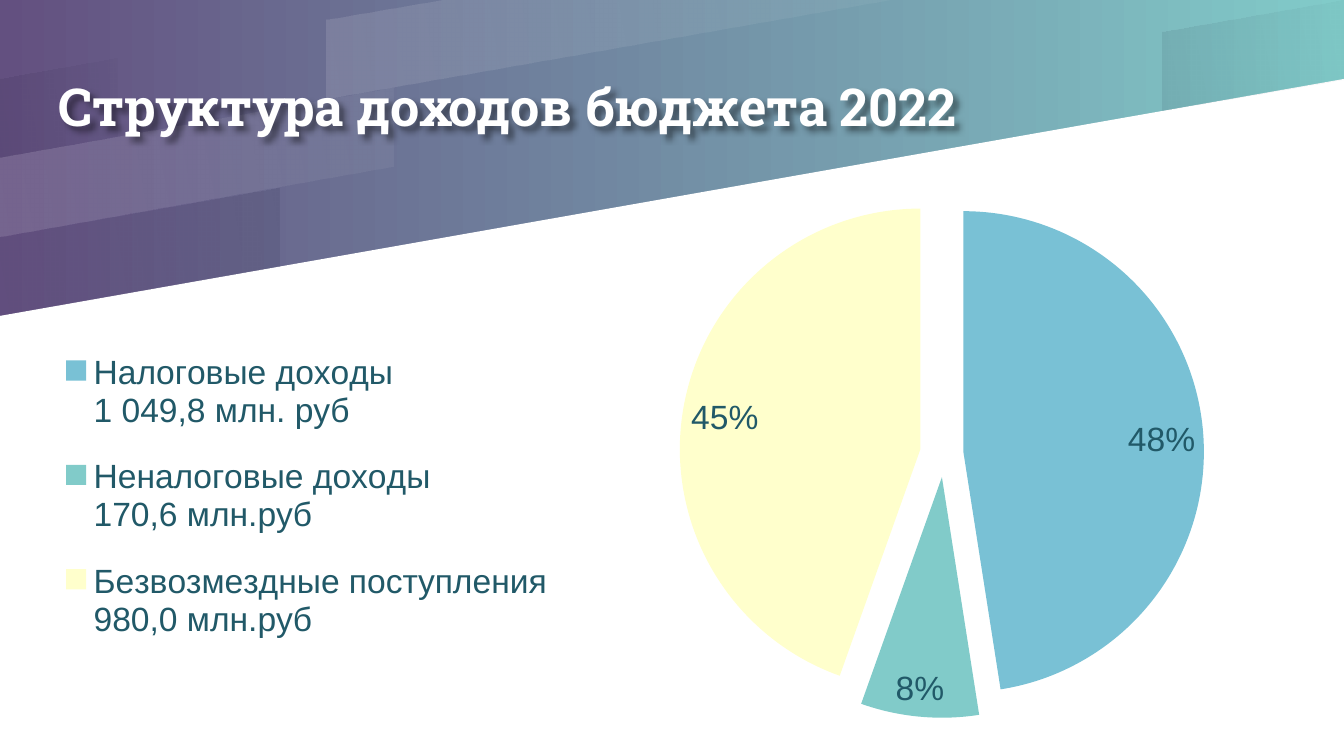
from dataclasses import dataclass

from lxml.etree import SubElement
from pptx import Presentation
from pptx.chart.chart import Chart
from pptx.chart.data import CategoryChartData
from pptx.chart.point import Point
from pptx.dml.color import RGBColor
from pptx.dml.fill import FillFormat
from pptx.enum.chart import XL_CHART_TYPE as ChartType
from pptx.enum.chart import XL_LABEL_POSITION as LabelPosition
from pptx.enum.chart import XL_LEGEND_POSITION as LegendPosition
from pptx.enum.text import MSO_ANCHOR as Anchor
from pptx.enum.text import PP_ALIGN as Align
from pptx.oxml import parse_xml
from pptx.oxml.ns import nsdecls, qn
from pptx.slide import Slide
from pptx.util import Emu, Pt

TITLE_ONLY = 5


@dataclass(frozen=True)
class Theme:
    violet: str = "635080"
    teal: str = "81CBC9"
    white: str = "FFFFFF"
    shade: str = "00001A"
    ink: str = "215968"
    title_font: str = "Roboto Slab"
    chart_font: str = "Arial"
    title_size: int = 28
    chart_size: int = 18


@dataclass(frozen=True)
class Box:
    left: int
    top: int
    width: int
    height: int


@dataclass(frozen=True)
class Band:
    outline: tuple[tuple[int, int], ...]
    color: str
    opacity: tuple[int, int]


@dataclass(frozen=True)
class Income:
    label: str
    share: int
    color: str
    explosion: int
    label_shift: tuple[int, int]


THEME = Theme()
SLIDE = Box(0, 0, 1344, 756)
TITLE = Box(59, 1, 1005, 178)
CHART = Box(27, 134, 1292, 597)
PIE = Box(580, 213, 729, 481)
LEGEND = Box(51, 325, 510, 342)

LOWER_PANEL = ((0, 756), (1344, 756), (1344, 79), (0, 316))
BANDS = (
    Band(((446, 0), (327, 20), (327, 99), (894, 0)), THEME.white, (12, 5)),
    Band(((0, 79), (0, 158), (117, 137), (117, 58)), THEME.shade, (8, 2)),
    Band(((0, 237), (0, 316), (279, 267), (279, 188)), THEME.shade, (2, 8)),
    Band(((1344, 0), (1163, 32), (1163, 110), (1344, 79)), THEME.shade, (8, 2)),
    Band(((0, 158), (0, 237), (394, 167), (394, 88)), THEME.white, (12, 5)),
)
INCOMES = (
    Income("Налоговые доходы\n1 049,8 млн. руб", 48, "79C1D5", 8, (0, 6)),
    Income("Неналоговые доходы\n170,6 млн.руб", 8, "81CBC9", 10, (-25, -1)),
    Income("Безвозмездные поступления\n980,0 млн.руб", 45, "FFFFCC", 10, (0, -11)),
)


def px(length: int) -> Emu:
    return Emu(round(length * 9144000 / SLIDE.width))


def rgb(code: str) -> RGBColor:
    return RGBColor.from_string(code)


def set_gradient(fill: FillFormat, colors: tuple[str, str], angle: int) -> None:
    fill.gradient()
    fill.gradient_angle = angle
    for stop, color in zip(fill.gradient_stops, colors):
        stop.color.rgb = rgb(color)


def draw_outline(slide: Slide, outline: tuple[tuple[int, int], ...]):
    points = [(px(x), px(y)) for x, y in outline]
    builder = slide.shapes.build_freeform(*points[0], scale=1.0)
    builder.add_line_segments(points[1:], close=True)
    shape = builder.convert_to_shape()
    shape.shadow.inherit = False
    shape.line.fill.background()
    return shape


def draw_band(slide: Slide, band: Band) -> None:
    shape = draw_outline(slide, band.outline)
    set_gradient(shape.fill, (band.color, band.color), 10)
    colors = shape._element.spPr.iter(qn("a:srgbClr"))
    for color, opacity in zip(colors, band.opacity):
        SubElement(color, qn("a:alpha")).set("val", str(opacity * 1000))


def write_title(slide: Slide, wording: str) -> None:
    title = slide.shapes.title
    title.left, title.top = px(TITLE.left), px(TITLE.top)
    title.width, title.height = px(TITLE.width), px(TITLE.height)
    frame = title.text_frame
    frame.word_wrap = True
    frame.vertical_anchor = Anchor.MIDDLE
    frame.margin_left = frame.margin_right = frame.margin_top = frame.margin_bottom = 0
    paragraph = frame.paragraphs[0]
    paragraph.alignment = Align.LEFT
    paragraph.line_spacing = 1.5
    run = paragraph.add_run()
    run.text = wording
    run.font.name = THEME.title_font
    run.font.size = Pt(THEME.title_size)
    run.font.bold = True
    run.font.color.rgb = rgb(THEME.white)
    # An unfilled box casts its shadow from the letters
    title.fill.background()
    title._element.spPr.append(parse_xml(
        f'<a:effectLst {nsdecls("a")}><a:outerShdw blurRad="38100" dist="38100" dir="2700000">'
        '<a:srgbClr val="000000"><a:alpha val="43000"/></a:srgbClr>'
        "</a:outerShdw></a:effectLst>"))
    # Bring the title in front of the bands
    slide.shapes._spTree.append(title._element)


def manual_layout(settings: dict[str, str | float]):
    layout = parse_xml(f'<c:layout {nsdecls("c")}><c:manualLayout/></c:layout>')
    for tag, value in settings.items():
        SubElement(layout[0], qn(f"c:{tag}")).set("val", str(value))
    return layout


def box_settings(box: Box) -> dict[str, str | float]:
    return {
        "xMode": "edge",
        "yMode": "edge",
        "x": round((box.left - CHART.left) / CHART.width, 3),
        "y": round((box.top - CHART.top) / CHART.height, 3),
        "w": round(box.width / CHART.width, 3),
        "h": round(box.height / CHART.height, 3),
    }


def place_parts(chart: Chart) -> None:
    plot_area = chart._chartSpace.chart.plotArea
    legend = chart.legend._element
    for part in (plot_area, legend):
        for old in part.findall(qn("c:layout")):
            part.remove(old)
    plot_area.insert(0, manual_layout({"layoutTarget": "inner"} | box_settings(PIE)))
    legend.find(qn("c:legendPos")).addnext(manual_layout(box_settings(LEGEND)))


def format_slice(point: Point, income: Income) -> None:
    fill = point.format.fill
    fill.solid()
    fill.fore_color.rgb = rgb(income.color)
    shape_properties = point.format._element.find(qn("c:spPr"))
    shape_properties.addprevious(
        parse_xml(f'<c:explosion {nsdecls("c")} val="{income.explosion}"/>'))

    # Percent label, nudged from its standard place
    point.data_label.position = LabelPosition.INSIDE_END
    label = point.data_label._dLbl
    label.find(qn("c:showVal")).set("val", "0")
    label.find(qn("c:showPercent")).set("val", "1")
    shift_x, shift_y = income.label_shift
    label.find(qn("c:idx")).addnext(manual_layout(
        {"x": round(shift_x / CHART.width, 3), "y": round(shift_y / CHART.height, 3)}))


def draw_pie(slide: Slide, incomes: tuple[Income, ...]) -> None:
    data = CategoryChartData()
    data.categories = [income.label for income in incomes]
    data.add_series("Series 1", [income.share for income in incomes])
    chart = slide.shapes.add_chart(
        ChartType.PIE, px(CHART.left), px(CHART.top), px(CHART.width), px(CHART.height), data
    ).chart
    chart.has_title = False
    chart.font.name = THEME.chart_font
    chart.font.size = Pt(THEME.chart_size)
    chart.font.color.rgb = rgb(THEME.ink)

    plot = chart.plots[0]
    plot.vary_by_categories = True
    for index, income in enumerate(incomes):
        format_slice(plot.series[0].points[index], income)

    chart.has_legend = True
    chart.legend.position = LegendPosition.RIGHT
    chart.legend.include_in_layout = False
    place_parts(chart)


def main() -> None:
    deck = Presentation()
    deck.slide_width, deck.slide_height = px(SLIDE.width), px(SLIDE.height)
    slide = deck.slides.add_slide(deck.slide_layouts[TITLE_ONLY])

    # Backdrop
    set_gradient(slide.background.fill, (THEME.violet, THEME.teal), 0)
    panel = draw_outline(slide, LOWER_PANEL)
    panel.fill.solid()
    panel.fill.fore_color.rgb = rgb(THEME.white)
    for band in BANDS:
        draw_band(slide, band)

    # Content
    write_title(slide, "Структура доходов бюджета 2022")
    draw_pie(slide, INCOMES)
    deck.save("out.pptx")


if __name__ == "__main__":
    main()
